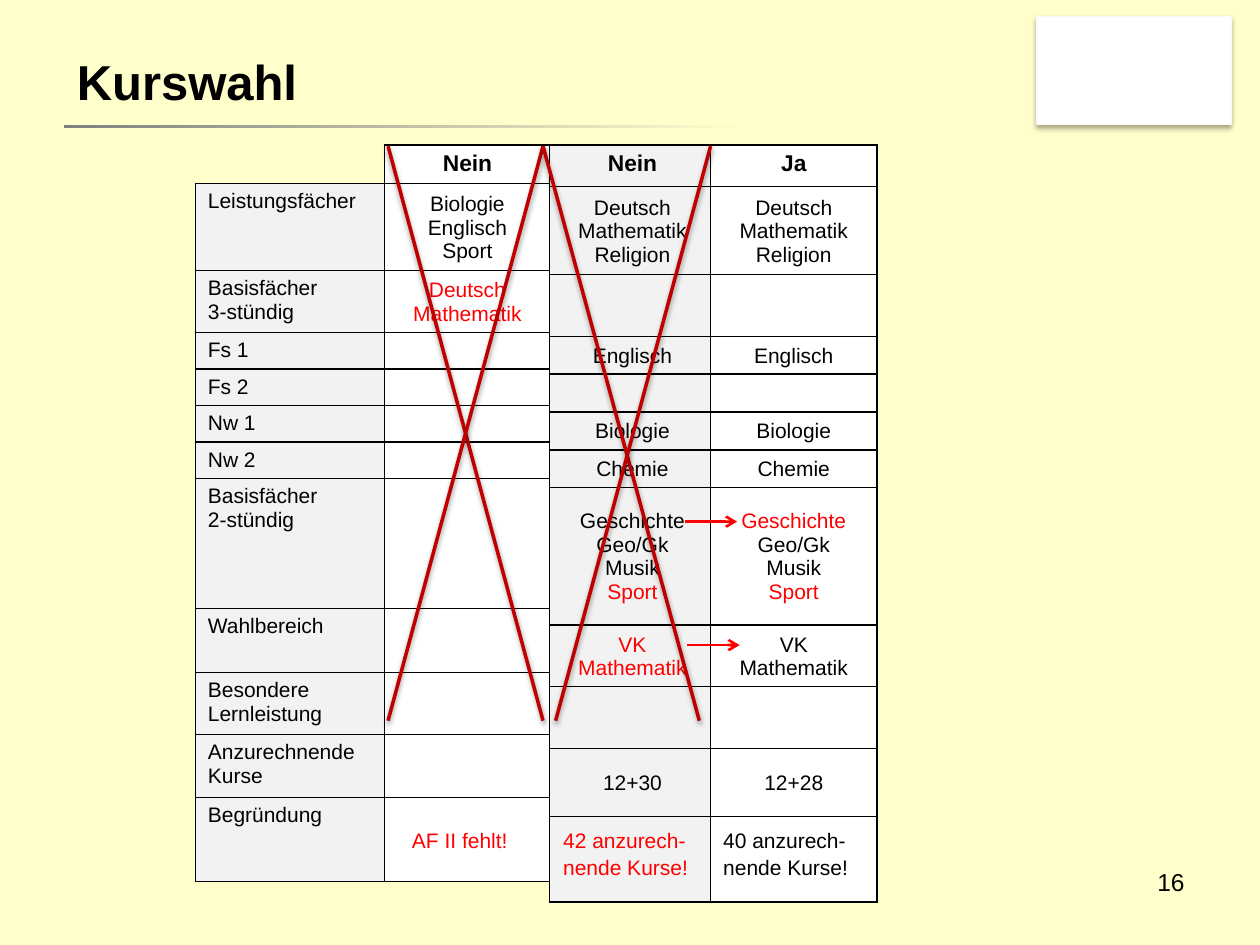
from dataclasses import dataclass
from typing import Sequence

from lxml import etree
from pptx import Presentation, util as u
from pptx.dml.color import RGBColor
from pptx.enum import shapes, text
from pptx.oxml import ns

FONT = "Arial"
COLORS = {"page": "FFFFCC", "ink": "000000", "alert": "FF0000", "cross": "C00000",
          "paper": "FFFFFF", "shade": "F2F2F2", "rule": "808080", "edge": "F9F9F9"}
NO_STYLE = "{2D5ABB26-0587-4C30-8999-92F81FD0307C}"
TOP = 1.15
CROSS_TOP, CROSS_BOTTOM = 1.16, 5.72
ALIGN = text.PP_ALIGN
ANCHOR = text.MSO_ANCHOR


@dataclass
class Cell:
    lines: Sequence[str] = ()
    red: Sequence[str] = ()
    fill: str = "paper"
    align: ALIGN = ALIGN.CENTER
    anchor: ANCHOR = ANCHOR.MIDDLE
    size: int = 12
    bold: bool = False
    sides: str = "LRTB"


@dataclass
class CourseTable:
    left: float
    widths: Sequence[float]
    heights: Sequence[float]
    columns: Sequence[Sequence[Cell]]


@dataclass
class Note:
    left: float
    width: float
    height: float
    words: str
    color: str


def rgb(name: str) -> RGBColor:
    return RGBColor.from_string(COLORS[name])


def child(parent, tag: str, **attributes):
    return etree.SubElement(parent, ns.qn(tag), **attributes)


def box(*lengths: float) -> list:
    return [u.Inches(length) for length in lengths]


def style(paragraph, size: int, color: str = "ink", bold: bool = False,
          align: ALIGN = ALIGN.LEFT) -> None:
    paragraph.alignment = align
    for run in paragraph.runs:
        run.font.name, run.font.size, run.font.bold = FONT, u.Pt(size), bold
        run.font.color.rgb = rgb(color)


def set_shadow(shape, alpha: int = 0, distance: float = 0) -> None:
    """Give a soft shadow straight below, or none when alpha is 0."""
    effects = child(shape._element.spPr, "a:effectLst")
    if alpha:
        outer = child(effects, "a:outerShdw", blurRad=str(u.Pt(3.1)), dist=str(u.Pt(distance)),
                      dir="5400000", rotWithShape="0")
        color = child(outer, "a:srgbClr", val=COLORS["ink"])
        child(color, "a:alpha", val=str(alpha * 1000))


def fill_cell(target, cell: Cell) -> None:
    properties = target._tc.get_or_add_tcPr()
    for side in "LRTB":
        border = child(properties, f"a:ln{side}", w=str(u.Pt(1)))
        if side in cell.sides:
            child(child(border, "a:solidFill"), "a:srgbClr", val=COLORS["ink"])
        else:
            child(border, "a:noFill")
    if cell.fill:
        target.fill.solid()
        target.fill.fore_color.rgb = rgb(cell.fill)
    else:
        target.fill.background()
    target.vertical_anchor = cell.anchor
    target.margin_bottom = u.Inches(0.04)
    target.text_frame.text = "\n".join(cell.lines)
    for paragraph in target.text_frame.paragraphs:
        color = "alert" if paragraph.text in cell.red else "ink"
        style(paragraph, cell.size, color, cell.bold, cell.align)
        if not paragraph.text:
            child(paragraph._p, "a:endParaRPr", sz=str(cell.size * 100))


def draw_table(slide, plan: CourseTable) -> None:
    frame = slide.shapes.add_table(
        len(plan.heights), len(plan.widths),
        *box(plan.left, TOP, sum(plan.widths), sum(plan.heights)))
    table = frame.table
    table._tbl.tblPr.find(ns.qn("a:tableStyleId")).text = NO_STYLE
    table.first_row = table.horz_banding = False
    for row, height in zip(table.rows, plan.heights):
        row.height = u.Inches(height)
    for index, (width, cells) in enumerate(zip(plan.widths, plan.columns)):
        table.columns[index].width = u.Inches(width)
        for row, cell in enumerate(cells):
            fill_cell(table.cell(row, index), cell)


def draw_line(slide, start: tuple, end: tuple, color: str, width: float):
    line = slide.shapes.add_connector(shapes.MSO_CONNECTOR.STRAIGHT, *box(*start, *end))
    line.line.color.rgb = rgb(color)
    line.line.width = u.Pt(width)
    return line


def draw_cross(slide, falling: tuple, rising: tuple) -> None:
    """Strike out a column; each pair holds the x at the top and at the bottom."""
    for upper, lower in (falling, rising):
        stroke = draw_line(slide, (upper, CROSS_TOP), (lower, CROSS_BOTTOM), "cross", 2)
        set_shadow(stroke, 38, 1.6)


def draw_arrow(slide, left: float, right: float, y: float) -> None:
    arrow = draw_line(slide, (left, y), (right, y), "alert", 1.5)
    child(arrow.line._get_or_add_ln(), "a:tailEnd", type="arrow")
    set_shadow(arrow)


def draw_note(slide, note: Note) -> None:
    frame = slide.shapes.add_textbox(*box(note.left, 6.51, note.width, note.height)).text_frame
    frame.word_wrap = True
    frame.auto_size = text.MSO_AUTO_SIZE.SHAPE_TO_FIT_TEXT
    frame.margin_left = frame.margin_right = 0
    frame.text = note.words
    frame.paragraphs[0].line_spacing = 1.06
    style(frame.paragraphs[0], 12, note.color)


def draw_rect(slide, *lengths: float):
    rect = slide.shapes.add_shape(shapes.MSO_SHAPE.RECTANGLE, *box(*lengths))
    rect.line.fill.background()
    return rect


def verdict(word: str, fill: str = "paper") -> Cell:
    return Cell([word], fill=fill, anchor=ANCHOR.TOP, size=13, bold=True)


def choice(word: str, fill: str, history_red: Sequence[str], advanced_red: Sequence[str],
           total: str) -> list:
    """The column of a choice with German, maths and religion as main subjects."""
    courses = [
        (["Deutsch", "Mathematik", "Religion"], ()), ((), ()), (["Englisch"], ()), ((), ()),
        (["Biologie"], ()), (["Chemie"], ()),
        (["Geschichte", "Geo/Gk", "Musik", "Sport"], history_red),
        (["VK Mathematik"], advanced_red), ((), ()), ([total], ()), ((), ())]
    return [verdict(word, fill)] + [Cell(lines, red, fill) for lines, red in courses]


LABELS = [["Leistungsfächer"], ["Basisfächer", "3-stündig"], ["Fs 1"], ["Fs 2"], ["Nw 1"],
          ["Nw 2"], ["Basisfächer", "2-stündig"], ["Wahlbereich"], ["Besondere Lernleistung"],
          ["Anzurechnende Kurse"], ["Begründung"]]
BASICS = ["Deutsch", "Mathematik"]
label_column = [Cell(fill="", sides="RB")] + [
    Cell(label, fill="shade", align=ALIGN.LEFT, anchor=ANCHOR.TOP) for label in LABELS]
first_choice = [verdict("Nein"), Cell(["Biologie", "Englisch", "Sport"]),
                Cell(BASICS, BASICS)] + [Cell() for _ in LABELS[2:]]
CHOICE_HEIGHTS = [0.33, 0.7, 0.49] + [0.3] * 4 + [1.09, 0.47, 0.49, 0.54, 0.68]
TABLES = [
    CourseTable(1.55, [1.5, 1.32],
                [0.3, 0.66, 0.47] + [0.29] * 4 + [1.03, 0.51, 0.47, 0.5, 0.67],
                [label_column, first_choice]),
    CourseTable(4.36, [1.32], CHOICE_HEIGHTS,
                [choice("Nein", "shade", ["Sport"], ["VK Mathematik"], "12+30")]),
    CourseTable(5.64, [1.32], CHOICE_HEIGHTS,
                [choice("Ja", "paper", ["Geschichte", "Sport"], (), "12+28")]),
]
NOTES = [Note(3.27, 1.23, 0.3, "AF II fehlt!", "alert"),
         Note(4.47, 1.14, 0.5, "42 anzurech-nende Kurse!", "alert"),
         Note(5.74, 1.14, 0.5, "40 anzurech-nende Kurse!", "ink")]


def draw_frame(slide) -> None:
    """Background, corner card, title with its rule, and page number."""
    slide.background.fill.solid()
    slide.background.fill.fore_color.rgb = rgb("page")
    card = draw_rect(slide, 8.23, 0.13, 1.54, 0.86)
    card.fill.solid()
    card.fill.fore_color.rgb = rgb("paper")
    card.line.color.rgb = rgb("edge")
    card.line.width = u.Pt(0.75)
    set_shadow(card, 35, 1.8)

    rule = draw_rect(slide, 0.51, 0.99, 5.42, 0.03)
    rule.shadow.inherit = False
    rule.fill.gradient()
    rule.fill.gradient_angle = 0
    for stop, color in zip(rule.fill.gradient_stops, ("rule", "page")):
        stop.color.rgb = rgb(color)

    title = slide.shapes.title
    title.left, title.top, title.width, title.height = box(0.51, 0.21, 9.06, 0.87)
    title.text_frame.text = "Kurswahl"
    title.text_frame.vertical_anchor = ANCHOR.MIDDLE
    style(title.text_frame.paragraphs[0], 28, bold=True)

    page_number = slide.shapes.add_textbox(*box(7.17, 6.83, 2.33, 0.52)).text_frame
    page_number.word_wrap = True
    page_number.text = "16"
    style(page_number.paragraphs[0], 14, align=ALIGN.RIGHT)


def main() -> None:
    deck = Presentation()
    deck.slide_width, deck.slide_height = box(10, 7.5)
    slide = deck.slides.add_slide(deck.slide_layouts[5])
    draw_frame(slide)
    for plan in TABLES:
        draw_table(slide, plan)
    draw_cross(slide, (3.08, 4.31), (4.31, 3.08))
    draw_cross(slide, (4.31, 5.55), (5.64, 4.41))
    for note in NOTES:
        draw_note(slide, note)
    draw_arrow(slide, 5.45, 5.87, 5.12)
    draw_arrow(slide, 5.44, 5.85, 4.14)
    deck.save("out.pptx")


if __name__ == "__main__":
    main()
